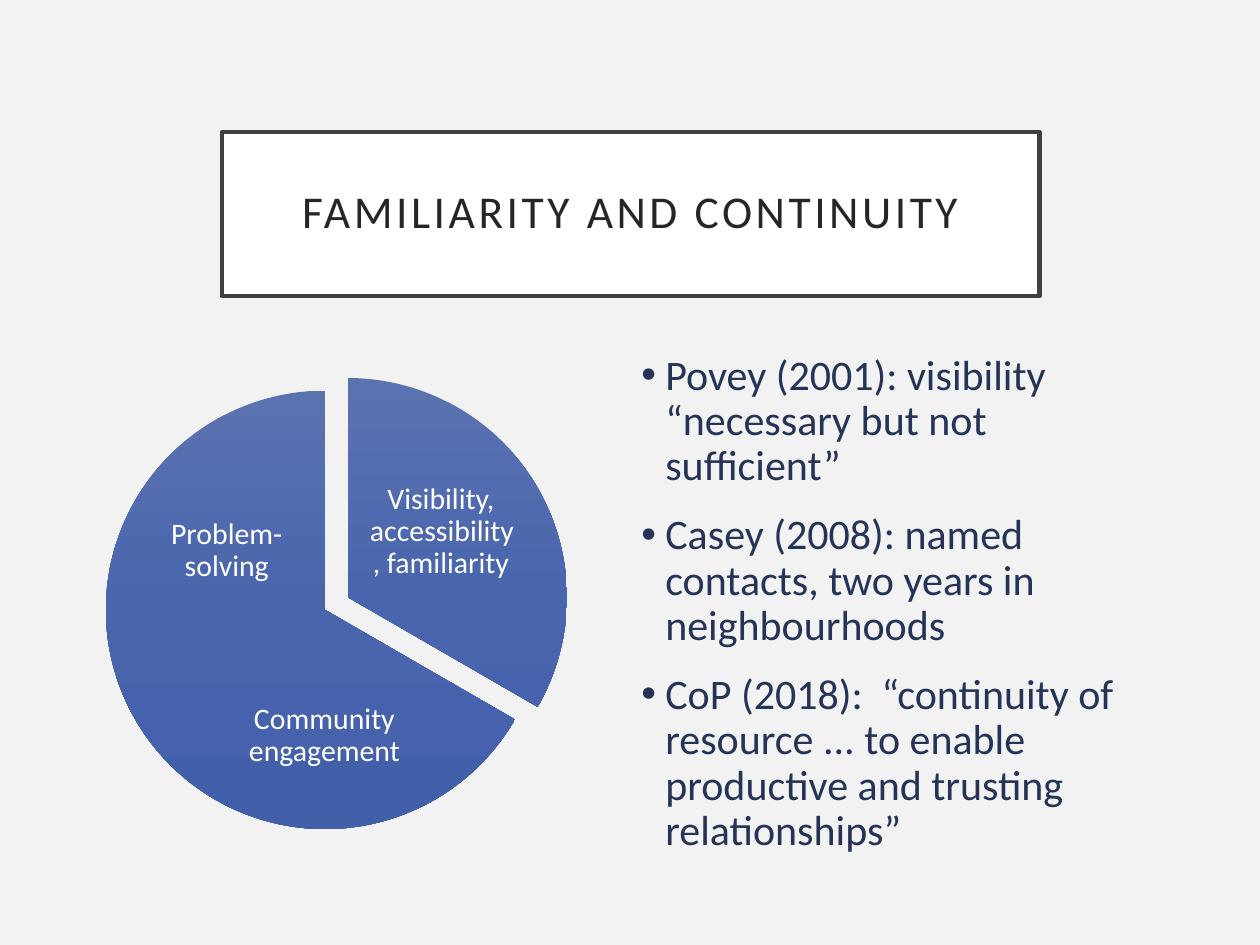
from copy import deepcopy
from dataclasses import dataclass

from lxml.etree import SubElement as Sub
from pptx import Presentation
from pptx.dml.color import RGBColor as Rgb
from pptx.enum.shapes import MSO_SHAPE as Kind
from pptx.enum.text import MSO_ANCHOR as Anchor, MSO_AUTO_SIZE as Fit, PP_ALIGN as Align
from pptx.oxml.ns import qn
from pptx.util import Inches, Pt


@dataclass(frozen=True)
class Theme:
    font: str = "Calibri"
    back: str = "F2F2F2"
    card: str = "FFFFFF"
    edge: str = "404040"
    head: str = "262626"
    body: str = "253356"
    label: str = "FFFFFF"
    blues: tuple = ("5B72B1", "4965AD", "4260AA")
    big: float = 26
    mid: float = 24
    small: float = 17
    lead: float = 0.9


LOOK = Theme()
COLS, ROWS = 100, 75
WIDE, HIGH = Inches(10), Inches(7.5)
PIE = 34.8
TURN = 360 / 3

SLICES = [
    ("Visibility, accessibility, familiarity", (10.2, 30), (29.1, 36.4, 11.8, 11.6)),
    ("Community engagement", (8.4, 31), (17.9, 53, 15.7, 10.8)),
    ("Problem-solving", (8.4, 31), (12.1, 37.9, 11.8, 11.6)),
]
POINTS = [
    "Povey (2001): visibility “necessary but not sufficient”",
    "Casey (2008): named contacts, two years in neighbourhoods",
    "CoP (2018):  “continuity of resource ... to enable productive and trusting relationships”",
]


def grid(col, row, cols, rows):
    return [
        round(col * WIDE / COLS),
        round(row * HIGH / ROWS),
        round(cols * WIDE / COLS),
        round(rows * HIGH / ROWS),
    ]


def frame(shape, side, edge, anchor):
    text = shape.text_frame
    text.word_wrap = True
    text.auto_size = Fit.NONE
    text.vertical_anchor = anchor
    text.margin_left = text.margin_right = Inches(side)
    text.margin_top = text.margin_bottom = Inches(edge)
    return text


def write(para, words, size, color, align):
    para.alignment = align
    para.line_spacing = LOOK.lead
    run = para.add_run()
    run.text = words
    run.font.name = LOOK.font
    run.font.size = Pt(size)
    run.font.color.rgb = Rgb.from_string(color)
    return run


def title(slide, words, box):
    shape = slide.shapes.title
    shape.left, shape.top, shape.width, shape.height = grid(*box)
    shape.fill.solid()
    shape.fill.fore_color.rgb = Rgb.from_string(LOOK.card)
    shape.line.color.rgb = Rgb.from_string(LOOK.edge)
    shape.line.width = Pt(2.5)
    text = frame(shape, 0.2, 0.2, Anchor.MIDDLE)
    run = write(text.paragraphs[0], words, LOOK.big, LOOK.head, Align.CENTER)
    run.font._element.set("spc", "200")


def shade(shape):
    fill = shape.fill
    fill.gradient()
    fill.gradient_angle = 270
    stops = shape._element.spPr.find(qn("a:gradFill")).find(qn("a:gsLst"))
    stops.append(deepcopy(stops[0]))
    for i, (stop, color) in enumerate(zip(fill.gradient_stops, LOOK.blues)):
        stop.position = i / 2
        stop.color.rgb = Rgb.from_string(color)


def wedge(group, spot, start):
    shape = group.shapes.add_shape(Kind.PIE, *grid(*spot, PIE, PIE))
    shape.shadow.inherit = False
    shape.line.fill.background()
    for i, angle in enumerate((start, start + TURN)):
        shape.adjustments[i] = angle % 360 * 0.6
    shade(shape)


def label(group, words, box):
    text = frame(group.shapes.add_textbox(*grid(*box)), 0.02, 0.02, Anchor.MIDDLE)
    write(text.paragraphs[0], words, LOOK.small, LOOK.label, Align.CENTER)


def wheel(slide):
    group = slide.shapes.add_group_shape()
    for i, (words, spot, box) in enumerate(SLICES):
        wedge(group, spot, 270 + i * TURN)
        label(group, words, box)


def bullet(para):
    props = para._p.get_or_add_pPr()
    dent = Inches(0.19)
    props.set("marL", str(dent))
    props.set("indent", str(-dent))
    Sub(props, qn("a:buFont")).set("typeface", "Arial")
    Sub(props, qn("a:buChar")).set("char", "•")


def points(slide, box):
    text = frame(slide.shapes.add_textbox(*grid(*box)), 0, 0.05, Anchor.TOP)
    for i, words in enumerate(POINTS):
        para = text.add_paragraph() if i else text.paragraphs[0]
        write(para, words, LOOK.mid, LOOK.body, Align.LEFT)
        para.space_before = Pt(13.5)
        bullet(para)


def main():
    deck = Presentation()
    deck.slide_width, deck.slide_height = WIDE, HIGH
    slide = deck.slides.add_slide(deck.slide_layouts[5])
    slide.background.fill.solid()
    slide.background.fill.fore_color.rgb = Rgb.from_string(LOOK.back)
    title(slide, "FAMILIARITY AND CONTINUITY", (17.6, 10.5, 64.9, 13))
    wheel(slide)
    points(slide, (50.9, 27.6, 40.1, 43.7))
    deck.save("out.pptx")


if __name__ == "__main__":
    main()
